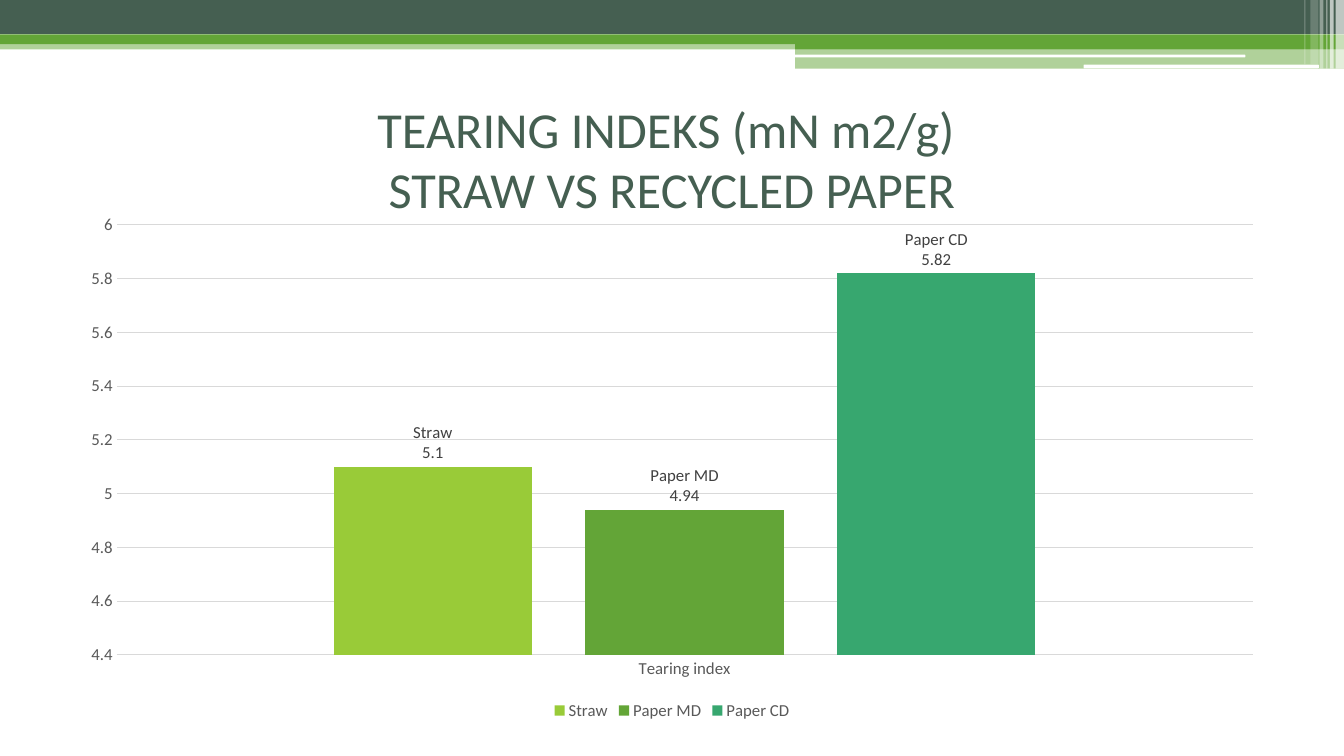
from dataclasses import dataclass

from lxml import etree
from pptx import Presentation
from pptx.chart.chart import Chart
from pptx.chart.data import CategoryChartData
from pptx.dml.color import RGBColor
from pptx.enum.chart import XL_CHART_TYPE, XL_LABEL_POSITION, XL_LEGEND_POSITION, XL_TICK_MARK
from pptx.enum.shapes import MSO_SHAPE
from pptx.enum.text import MSO_ANCHOR, PP_ALIGN
from pptx.oxml.ns import qn
from pptx.slide import Slide
from pptx.text.text import Font
from pptx.util import Pt

RECTANGLE = MSO_SHAPE.RECTANGLE
ROUNDED = MSO_SHAPE.ROUNDED_RECTANGLE
COLUMN_CLUSTERED = XL_CHART_TYPE.COLUMN_CLUSTERED
OUTSIDE_END = XL_LABEL_POSITION.OUTSIDE_END
LEGEND_BOTTOM = XL_LEGEND_POSITION.BOTTOM
NO_TICK = XL_TICK_MARK.NONE
CENTER = PP_ALIGN.CENTER
MIDDLE = MSO_ANCHOR.MIDDLE

FONT = "Calibri"
COLORS = {
    "dark": "455F51",
    "green": "63A537",
    "lime": "99CB38",
    "teal": "37A76F",
    "white": "FFFFFF",
    "grid": "D9D9D9",
    "axis text": "595959",
    "label text": "404040",
}


@dataclass(frozen=True)
class Band:
    left: float
    top: float
    width: float
    height: float
    color: str
    opacity: int = 100
    rounded: bool = False


@dataclass(frozen=True)
class Sample:
    name: str
    tearing_index: float
    color: str


BANDS = [
    Band(0, 28.8, 960, 6.5, "green", 50),
    Band(0, 0, 960, 24.5, "dark"),
    Band(0, 24.5, 960, 7, "green"),
    Band(568, 28, 392, 7.2, "green"),
    Band(568, 35, 392, 14, "green", 50),
    Band(567.5, 39, 322, 2, "white", rounded=True),
    Band(774, 46.2, 168, 2.6, "white", rounded=True),
    Band(954, 0, 6, 49, "white", 65),
    Band(950, 0, 2.6, 49, "white", 65),
    Band(947.5, 0, 0.7, 49, "white", 60),
    Band(942.7, 0, 2.6, 49, "white", 40),
    Band(936, 0, 5.8, 46, "white", 20),
    Band(931.7, 0, 0.7, 46, "white", 30),
]
SAMPLES = [
    Sample("Straw", 5.1, "lime"),
    Sample("Paper MD", 4.94, "green"),
    Sample("Paper CD", 5.82, "teal"),
]


def rgb(name: str) -> RGBColor:
    return RGBColor.from_string(COLORS[name])


def style_font(font: Font, size: float, color: str) -> None:
    font.name = FONT
    font.size = Pt(size)
    font.bold = False
    font.color.rgb = rgb(color)


def draw_band(slide: Slide, band: Band) -> None:
    shape = slide.shapes.add_shape(
        ROUNDED if band.rounded else RECTANGLE,
        Pt(band.left), Pt(band.top), Pt(band.width), Pt(band.height),
    )
    shape.shadow.inherit = False
    shape.line.fill.background()
    shape.fill.solid()
    shape.fill.fore_color.rgb = rgb(band.color)
    if band.opacity < 100:
        color = shape.fill._xPr.find(".//" + qn("a:srgbClr"))
        etree.SubElement(color, qn("a:alpha"), val=str(band.opacity * 1000))


def draw_title(slide: Slide) -> None:
    shape = slide.shapes.add_textbox(Pt(48), Pt(70), Pt(864), Pt(86))
    frame = shape.text_frame
    frame.word_wrap = True
    frame.vertical_anchor = MIDDLE
    paragraph = frame.paragraphs[0]
    paragraph.text = "TEARING INDEKS (mN m2/g) \vSTRAW VS RECYCLED PAPER"
    paragraph.alignment = CENTER
    style_font(paragraph.font, 36, "dark")


def style_axes(chart: Chart) -> None:
    for axis in (chart.category_axis, chart.value_axis):
        axis.major_tick_mark = NO_TICK
        axis.minor_tick_mark = NO_TICK
        style_font(axis.tick_labels.font, 12, "axis text")
    values = chart.value_axis
    values.minimum_scale, values.maximum_scale, values.major_unit = 4.4, 6, 0.2
    values.format.line.fill.background()
    for line in (chart.category_axis.format.line, values.major_gridlines.format.line):
        line.color.rgb = rgb("grid")
        line.width = Pt(0.75)


def draw_chart(slide: Slide) -> None:
    data = CategoryChartData()
    data.categories = ["Tearing index"]
    for sample in SAMPLES:
        data.add_series(sample.name, [sample.tearing_index])
    chart = slide.shapes.add_chart(
        COLUMN_CLUSTERED, Pt(48), Pt(146), Pt(864), Pt(371.5), data
    ).chart
    style_font(chart.font, 12, "axis text")
    chart.has_title = False
    chart.has_legend = True
    chart.legend.position = LEGEND_BOTTOM
    chart.legend.include_in_layout = False
    style_font(chart.legend.font, 12, "axis text")
    style_axes(chart)

    plot = chart.plots[0]
    plot.gap_width = 219
    plot.overlap = -27
    plot.vary_by_categories = False
    for sample, series in zip(SAMPLES, plot.series):
        series.format.fill.solid()
        series.format.fill.fore_color.rgb = rgb(sample.color)
        labels = series.data_labels
        labels.show_value = True
        labels.show_series_name = True
        labels.position = OUTSIDE_END
        style_font(labels.font, 12, "label text")
        separator = etree.Element(qn("c:separator"))
        separator.text = "\n"
        labels._element.find(qn("c:showBubbleSize")).addnext(separator)


def main() -> None:
    presentation = Presentation()
    presentation.slide_width = Pt(960)
    presentation.slide_height = Pt(540)
    slide = presentation.slides.add_slide(presentation.slide_layouts[6])
    for band in BANDS:
        draw_band(slide, band)
    draw_title(slide)
    draw_chart(slide)
    presentation.save("out.pptx")


if __name__ == "__main__":
    main()
